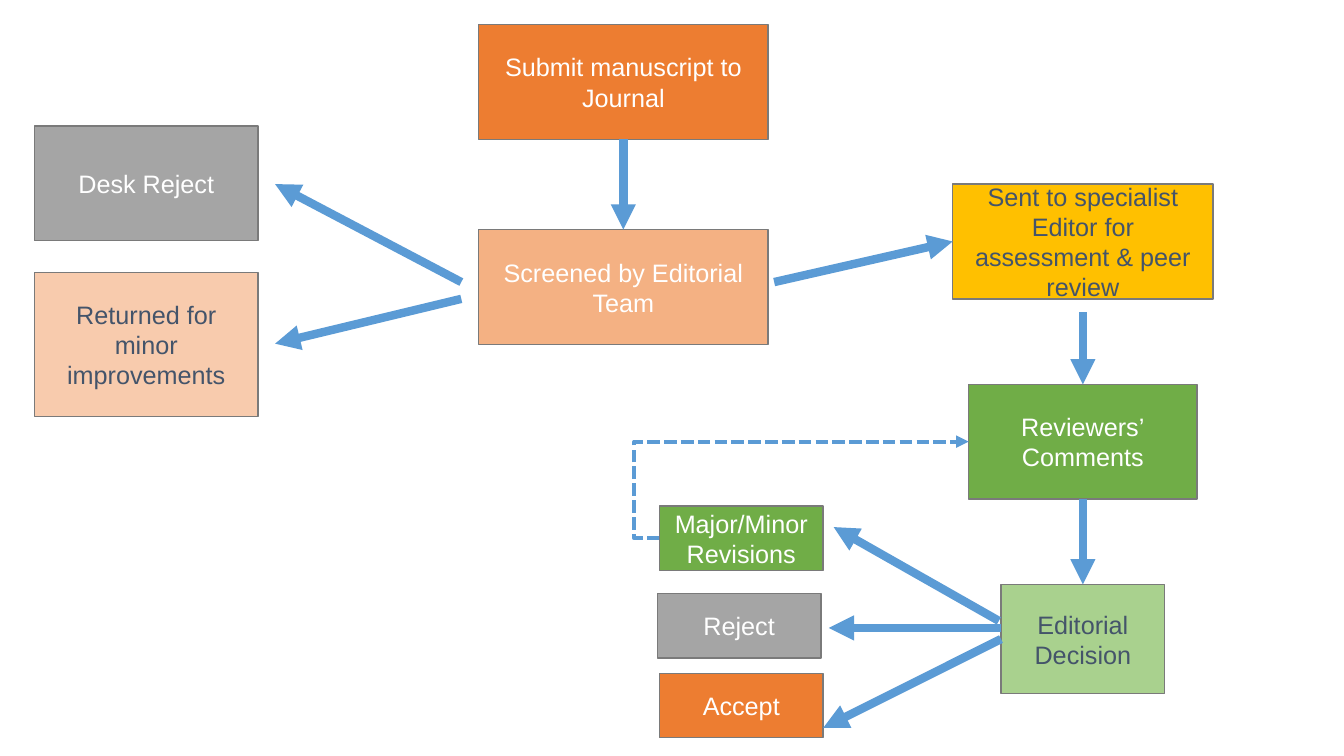
import pptx
import pptx.dml.color
import pptx.enum.dml
import pptx.enum.shapes
import pptx.enum.text
import pptx.oxml
import pptx.oxml.ns
import pptx.util

Pt = pptx.util.Pt
TOP, LEFT, BOTTOM = 0, 1, 2
WHITE, SLATE = "FFFFFF", "44546A"
ORANGE, GRAY, GREEN, BLUE = "ED7D31", "A5A5A5", "70AD47", "5B9BD5"
BOX_H = 82


def rgb(value):
    return pptx.dml.color.RGBColor.from_string(value)


def add_element(parent, tag, **attributes):
    child = pptx.oxml.parse_xml(f"<a:{tag} {pptx.oxml.ns.nsdecls('a')}/>")
    for name, value in attributes.items():
        child.set(name, value)
    parent.append(child)


def add_step(s, x, y, w, h, fill, color, *lines):
    """Add a flowchart box with one centred paragraph per line."""
    sp = s.shapes.add_shape(pptx.enum.shapes.MSO_SHAPE.RECTANGLE, Pt(x), Pt(y), Pt(w), Pt(h))
    sp.shadow.inherit = False
    sp.fill.solid()
    sp.fill.fore_color.rgb = rgb(fill)
    sp.line.color.rgb = rgb("7A7A7A")
    sp.line.width = Pt(1)
    tf = sp.text_frame
    tf.word_wrap = True
    tf.vertical_anchor = pptx.enum.text.MSO_ANCHOR.MIDDLE
    for i, line in enumerate(lines):
        p = tf.add_paragraph() if i else tf.paragraphs[0]
        p.alignment = pptx.enum.text.PP_ALIGN.CENTER
        r = p.add_run()
        r.text = line
        r.font.name = "Arial"
        r.font.size = Pt(18)
        r.font.color.rgb = rgb(color)
    return sp


def add_arrow(s, start, end, width=6, elbow=None):
    """Join two ends, each a point (x, y) or a (shape, side) pair."""
    kinds = pptx.enum.shapes.MSO_CONNECTOR
    joins_start, joins_end = (not isinstance(e[0], (int, float)) for e in (start, end))
    x1, y1 = (0, 0) if joins_start else start
    x2, y2 = (0, 0) if joins_end else end
    c = s.shapes.add_connector(kinds.STRAIGHT if elbow is None else kinds.ELBOW,
                               Pt(x1), Pt(y1), Pt(x2), Pt(y2))
    if joins_start:
        c.begin_connect(*start)
    if joins_end:
        c.end_connect(*end)
    c.line.color.rgb = rgb(BLUE)
    c.line.width = Pt(width)
    if elbow is not None:
        c.line.dash_style = pptx.enum.dml.MSO_LINE.SQUARE_DOT
        guides = c._element.spPr.find(".//" + pptx.oxml.ns.qn("a:avLst"))
        add_element(guides, "gd", name="adj1", fmla=f"val {elbow}")
    add_element(c.line._get_or_add_ln(), "tailEnd", type="triangle")
    add_element(c._element.spPr, "effectLst")
    return c


def add_screening(s, x, y, w):
    submit = add_step(s, x, y, w, BOX_H, ORANGE, WHITE, "Submit manuscript to Journal")
    screened = add_step(s, x, y + 146.5, w, BOX_H, "F4B183", WHITE, "Screened by Editorial Team")
    add_arrow(s, (submit, BOTTOM), (screened, TOP))


def add_early_outcomes(s, x, y, w):
    add_step(s, x, y, w, BOX_H, GRAY, WHITE, "Desk Reject")
    add_step(s, x, y + 104.5, w, 103, "F8CBAD", SLATE, "Returned for minor improvements")
    tip, start = x + w + 12, x + w + 145
    add_arrow(s, (start, y + 111.5), (tip, y + 41.5))
    add_arrow(s, (start, y + 123.5), (tip, y + 155.5))


def add_review(s, center, y):
    """Add the review column, centred on one axis; return its three boxes."""
    def centred(dy, w, h, *style):
        return add_step(s, center - w / 2, y + dy, w, h, *style)

    editor = centred(0, 186, BOX_H, "FFC000", SLATE,
                     "Sent to specialist Editor for assessment & peer review")
    comments = centred(143, 163, BOX_H, GREEN, WHITE, "Reviewers’", "Comments")
    decision = centred(286, 117, 78, "A9D18E", SLATE, "Editorial Decision")
    add_arrow(s, (center, y + 91.5), (comments, TOP))
    add_arrow(s, (comments, BOTTOM), (decision, TOP))
    return editor, comments, decision


def add_decisions(s, x, y, w, decision):
    """Add the three outcomes of the decision box; return the revisions box."""
    h = 46
    revisions = add_step(s, x, y, w, h, GREEN, WHITE, "Major/Minor Revisions")
    add_step(s, x - 1.5, y + 62.5, w, h, GRAY, WHITE, "Reject")
    add_step(s, x, y + 119.5, w, h, ORANGE, WHITE, "Accept")
    start = decision.left.pt
    add_arrow(s, (start - 1.5, y + 82), (x + w + 7.5, y + 15))
    add_arrow(s, (start, y + 87), (x + w + 4, y + 87))
    add_arrow(s, (decision, LEFT), (x + w, y + 158.5))
    return revisions


def main():
    prs = pptx.Presentation()
    prs.slide_width, prs.slide_height = Pt(960), Pt(540)
    s = prs.slides.add_slide(prs.slide_layouts[6])
    add_screening(s, 342, 17.5, 206.5)
    add_early_outcomes(s, 24.5, 90, 160)
    editor, comments, decision = add_review(s, 773.5, 131.5)
    revisions = add_decisions(s, 471, 361.5, 117, decision)
    add_arrow(s, (553, 201.5), (editor, LEFT))
    add_arrow(s, (revisions, LEFT), (comments, LEFT), width=3, elbow=-8100)
    prs.save("out.pptx")


if __name__ == "__main__":
    main()
